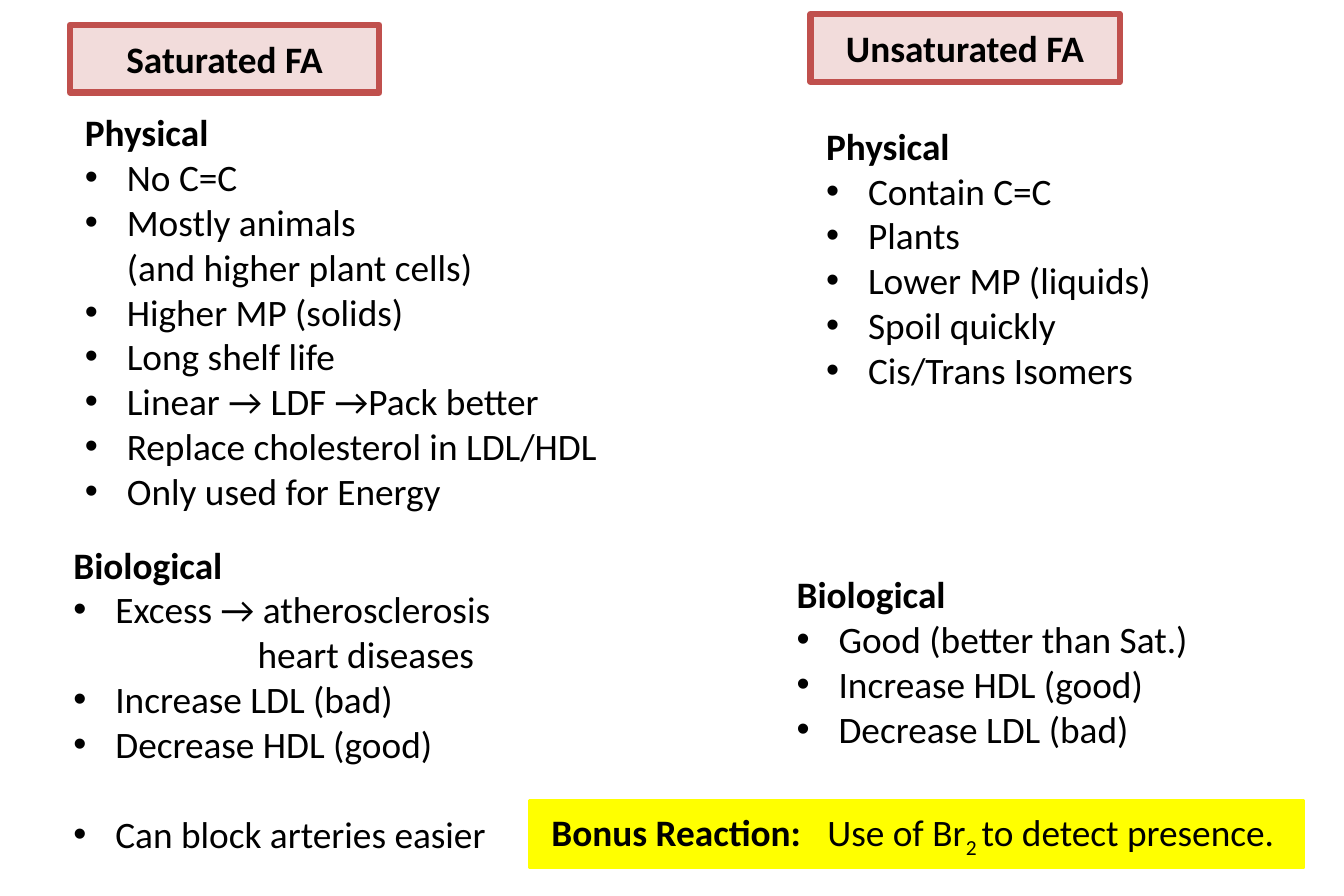
from lxml import etree
from pptx import Presentation
from pptx.dml.color import RGBColor
from pptx.enum import shapes, text
from pptx.oxml import ns
from pptx.util import Pt

COLORS = {"text": "000000", "heading_fill": "F2DCDB", "heading_line": "C0504D",
          "bonus": "FFFF00"}
INDENT = 13.5
LINE = 14.65

# Each list: heading, left, top, width, height, items.
# An item is its text, or its text with paragraph format.
LISTS = [
    ("Physical", 20.2, 31.7, 180.7, 138.2, [
        "No C=C",
        "Mostly animals",
        ("(and higher plant cells)", {"bullet": False, "indent": INDENT}),
        "Higher MP (solids)",
        "Long shelf life",
        "Linear → LDF →Pack better",
        "Replace cholesterol in LDL/HDL",
        "Only used for Energy"]),
    ("Physical", 258.5, 36, 120.2, 94.3, [
        "Contain C=C", "Plants", "Lower MP (liquids)", "Spoil quickly",
        "Cis/Trans Isomers"]),
    ("Biological", 16.5, 170.6, 154, 108.7, [
        "Excess →\u00a0atherosclerosis",
        ("heart diseases", {"bullet": False, "indent": 59.2}),
        "Increase LDL (bad)",
        "Decrease HDL (good)",
        ("Can block arteries easier", {"before": LINE})]),
    ("Biological", 249, 180.2, 141.8, 79.9, [
        "Good (better than Sat.)", "Increase HDL (good)",
        "Decrease LDL (bad)"]),
]


def rgb(name):
    return RGBColor.from_string(COLORS[name])


def add_run(p, content, bold=False, baseline=None):
    r = p.add_run()
    r.text = content
    r.font.name, r.font.size, r.font.bold = "Calibri", Pt(12), bold
    r.font.color.rgb = rgb("text")
    if baseline:
        r.font._element.set("baseline", str(baseline))


def format_paragraph(p, bullet=True, indent=INDENT, before=0):
    p.space_before = Pt(before)
    pPr = p._p.get_or_add_pPr()
    pPr.set("marL", str(Pt(indent)))
    if bullet:
        pPr.set("indent", str(-Pt(INDENT)))
        font = etree.SubElement(pPr, ns.qn("a:buFont"))
        font.set("typeface", "Arial")
        etree.SubElement(pPr, ns.qn("a:buChar")).set("char", "•")


def add_list(s, heading, left, top, width, height, items):
    tf = s.shapes.add_textbox(Pt(left), Pt(top), Pt(width), Pt(height)).text_frame
    tf.word_wrap = False
    tf.auto_size = text.MSO_AUTO_SIZE.SHAPE_TO_FIT_TEXT
    add_run(tf.paragraphs[0], heading, bold=True)
    for item in items:
        content, options = (item, {}) if isinstance(item, str) else item
        p = tf.add_paragraph()
        format_paragraph(p, **options)
        add_run(p, content)


def add_box(s, left, top, width, height, fill, line, weight):
    """Add a filled rectangle and return its first paragraph."""
    sp = s.shapes.add_shape(shapes.MSO_SHAPE.RECTANGLE,
                            Pt(left), Pt(top), Pt(width), Pt(height))
    sp.shadow.inherit = False
    sp.fill.solid()
    sp.fill.fore_color.rgb = rgb(fill)
    sp.line.color.rgb = rgb(line)
    sp.line.width = Pt(weight)
    tf = sp.text_frame
    tf.vertical_anchor = text.MSO_ANCHOR.MIDDLE
    return tf.paragraphs[0]


def add_heading(s, content, left, top):
    p = add_box(s, left, top, 99.4, 21.8, "heading_fill", "heading_line", 2)
    p.alignment = text.PP_ALIGN.CENTER
    add_run(p, content, bold=True)


def add_bonus(s):
    p = add_box(s, 170.2, 257.3, 249.1, 21.8, "bonus", "bonus", 0.75)
    p.alignment = text.PP_ALIGN.LEFT
    tabs = etree.SubElement(p._p.get_or_add_pPr(), ns.qn("a:tabLst"))
    tab = etree.SubElement(tabs, ns.qn("a:tab"))
    tab.set("pos", str(Pt(88.7)))
    tab.set("algn", "l")
    add_run(p, "Bonus Reaction:\t", bold=True)
    add_run(p, "Use of Br")
    add_run(p, "2 ", baseline=-25000)
    add_run(p, "to detect presence.")


def main():
    prs = Presentation()
    prs.slide_width, prs.slide_height = Pt(432), Pt(288)
    s = prs.slides.add_slide(prs.slide_layouts[6])
    add_heading(s, "Saturated FA", 22.5, 8)
    add_heading(s, "Unsaturated FA", 260.5, 4.5)
    for entry in LISTS:
        add_list(s, *entry)
    add_bonus(s)
    prs.save("out.pptx")


if __name__ == "__main__":
    main()
